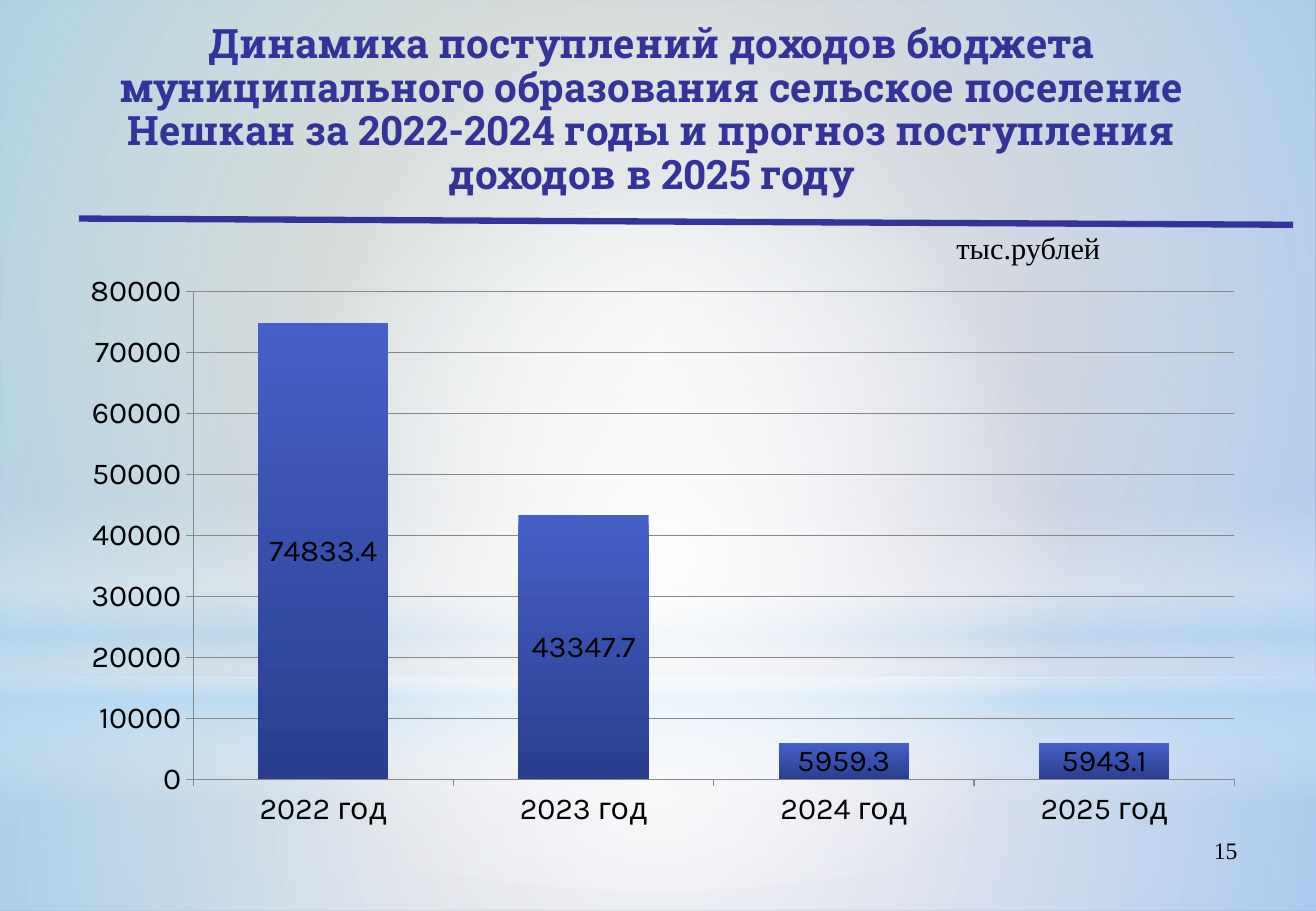
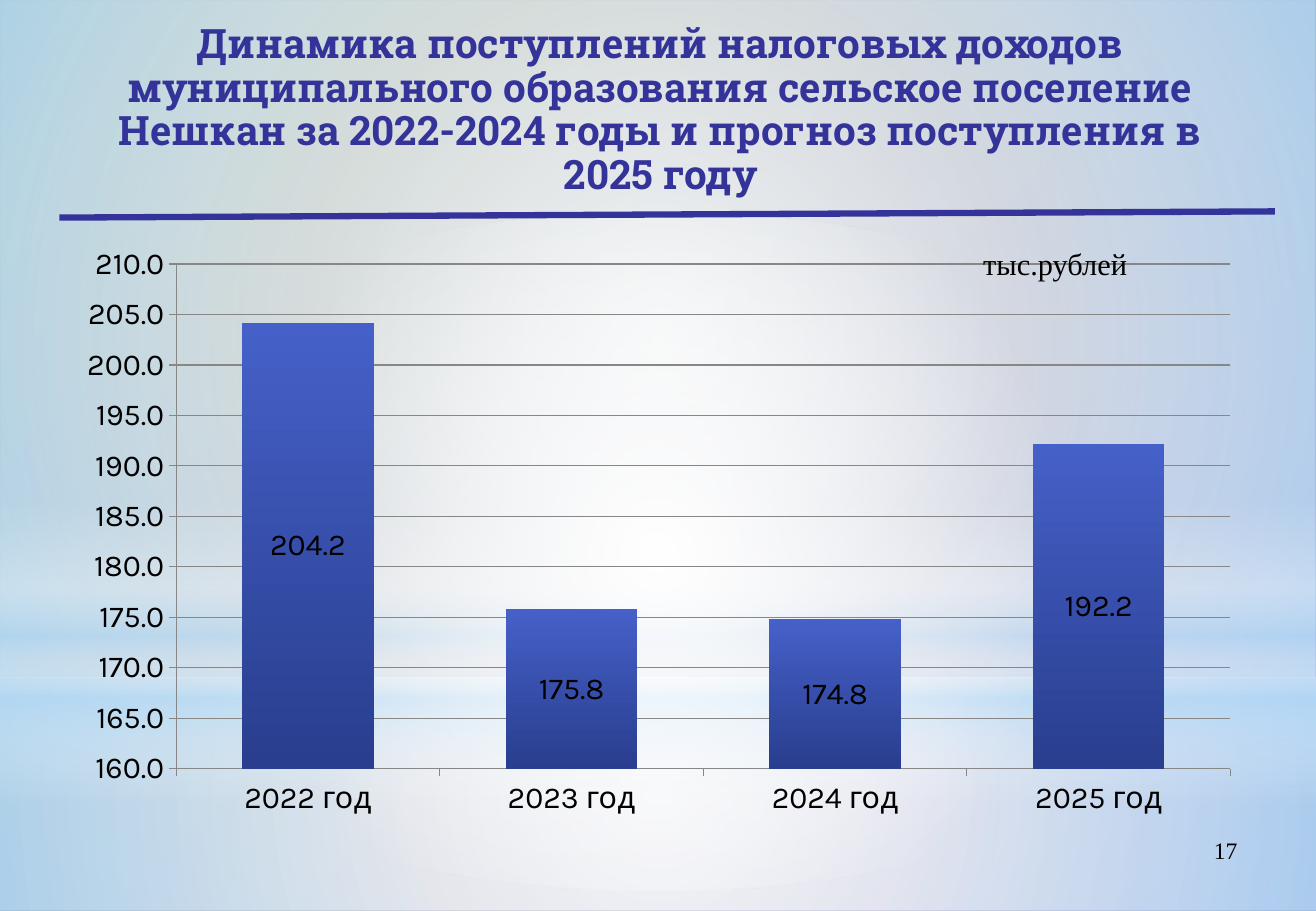
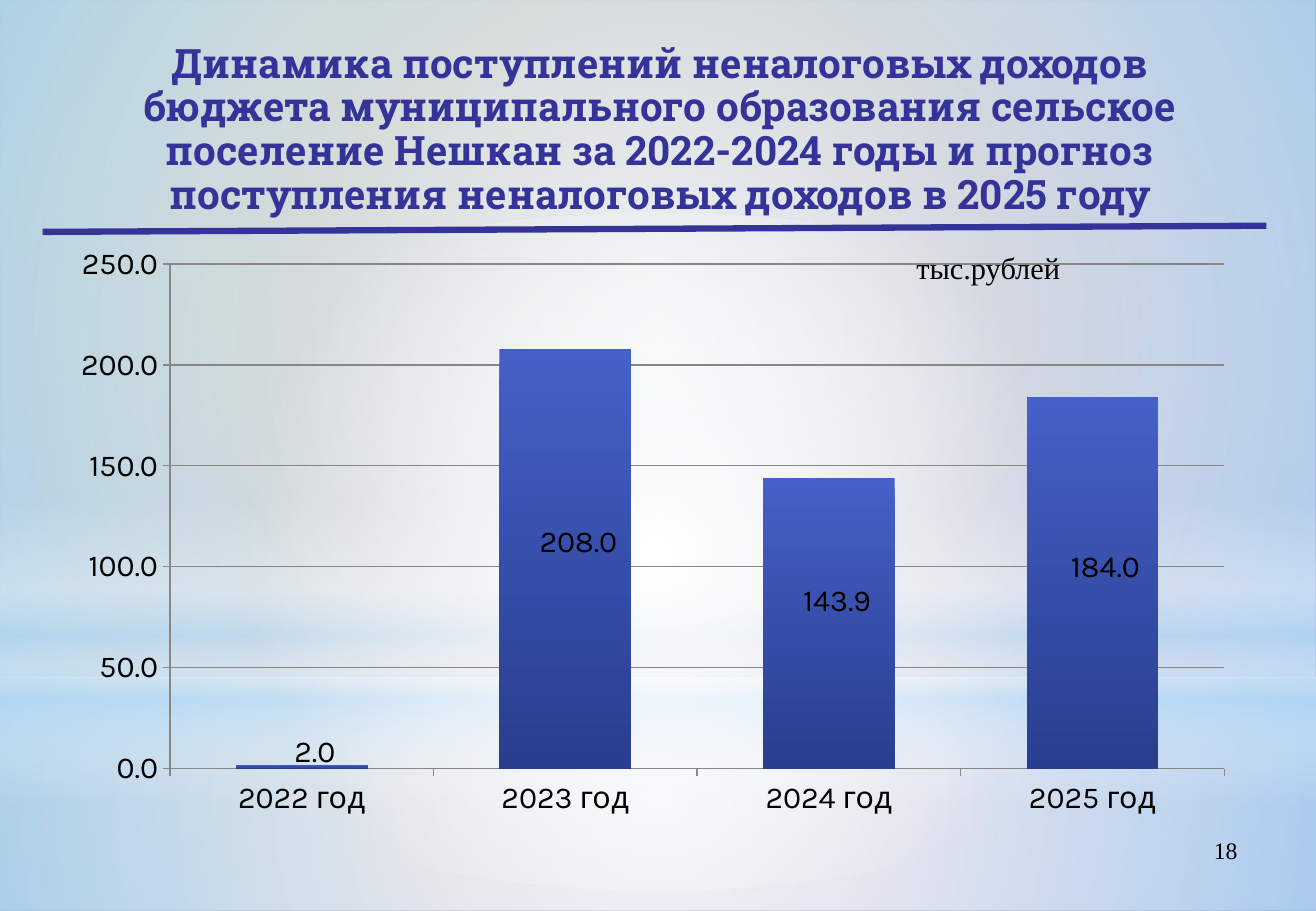
from dataclasses import dataclass

from lxml import etree
from pptx import Presentation
from pptx.chart.data import CategoryChartData
from pptx.dml.color import RGBColor
from pptx.enum.chart import XL_CHART_TYPE, XL_LABEL_POSITION, XL_TICK_MARK
from pptx.enum.shapes import MSO_CONNECTOR, MSO_SHAPE
from pptx.enum.text import MSO_ANCHOR, MSO_AUTO_SIZE, PP_ALIGN
from pptx.oxml import parse_xml
from pptx.oxml.ns import nsdecls, qn
from pptx.util import Cm, Pt

STACKED = XL_CHART_TYPE.COLUMN_STACKED
CENTER = XL_LABEL_POSITION.CENTER
OUTSIDE = XL_TICK_MARK.OUTSIDE
RECT, OVAL = MSO_SHAPE.RECTANGLE, MSO_SHAPE.OVAL
STRAIGHT = MSO_CONNECTOR.STRAIGHT
MIDDLE = MSO_ANCHOR.MIDDLE
FIXED = MSO_AUTO_SIZE.NONE
LEFT, MID, RIGHT = PP_ALIGN.LEFT, PP_ALIGN.CENTER, PP_ALIGN.RIGHT

WIDE, HIGH = 27.53, 19.05
YEARS = ("2022 год", "2023 год", "2024 год", "2025 год")


@dataclass(frozen=True)
class Theme:
    ink: str = "000000"
    head: str = "333399"
    grid: str = "878787"
    bar: tuple = ("4560C8", "293E8E")
    back: tuple = ("96AB94", "8488C4")
    head_font: str = "Roboto Slab"
    body_font: str = "Times New Roman"
    chart_font: str = "Karla"
    head_size: float = 24
    text_size: float = 18
    page_size: float = 14
    rule: float = 3.75


@dataclass(frozen=True)
class Glow:
    kind: int
    top: float
    high: float
    stops: tuple
    round: bool = True


@dataclass(frozen=True)
class Scale:
    low: float
    high: float
    step: float
    form: str


@dataclass(frozen=True)
class Page:
    title: str
    num: str
    head: tuple
    rule: tuple
    box: tuple
    unit: tuple
    left: float
    vals: tuple
    scale: Scale
    shifts: tuple = ()


THEME = Theme()

GLOWS = (
    Glow(RECT, 14.17, 4.88, ((0, "FFFFFF", 91), (37, "FFFFFF", 76), (100, "B4DCFA", 79))),
    Glow(RECT, 0, 14.17, ((0, "FFFFFF", 89), (48, "FFFFFF", 62), (100, "B4DCFA", 79))),
    Glow(RECT, 10.46, 6.35, ((0, "FFFFFF", 0), (29, "FFFFFF", 30), (45, "B4DCFA", 40),
                             (55, "FFFFFF", 26), (65, "B4DCFA", 60), (100, "FFFFFF", 0)), False),
    Glow(OVAL, 4.45, 14.17, ((0, "FFFFFF", 100), (56, "FFFFFF", 0))),
)

PAGES = (
    Page("Динамика поступлений доходов бюджета муниципального образования сельское поселение "
         "Нешкан за 2022-2024 годы и прогноз поступления доходов в 2025 году",
         "15", (1.24, 0.58), (1.65, 4.57, 27.05, 4.7), (1.4, 5.49, 24.92, 12.01),
         (19.76, 4.67), 0.106, (74833.4, 43347.7, 5959.3, 5943.1),
         Scale(0, 80000, 10000, "General")),
    Page("Динамика поступлений налоговых доходов муниципального образования сельское поселение "
         "Нешкан за 2022-2024 годы и прогноз поступления в 2025 году",
         "17", (1.42, 0.58), (1.24, 4.55, 26.67, 4.42), (1.32, 4.9, 24.92, 12.42),
         (20.32, 5), 0.095, (204.2, 175.8, 174.8, 192.2), Scale(160, 210, 5, "0.0")),
    Page("Динамика поступлений неналоговых доходов бюджета муниципального образования сельское "
         "поселение Нешкан за 2022-2024 годы и прогноз поступления неналоговых доходов в 2025 году",
         "18", (1.42, 0.99), (0.89, 4.85, 26.49, 4.72), (1.19, 4.9, 24.92, 12.42),
         (18.92, 5.08), 0.095, (2, 208, 143.9, 184), Scale(0, 250, 50, "0.0"),
         ((0.011, -0.025), (0.011, -0.027), (0.007, -0.037), (0.011, -0.027))),
)


def tint(code: str) -> RGBColor:
    return RGBColor.from_string(code)


def style(font, face: str, size: float, code: str, bold: bool = False) -> None:
    font.name = face
    font.size = Pt(size)
    font.bold = bold
    font.color.rgb = tint(code)


def write(frame, text: str, face: str, size: float, code: str, side, bold: bool = False):
    para = frame.paragraphs[0]
    para.alignment = side
    run = para.add_run()
    run.text = text
    style(run.font, face, size, code, bold)
    return para


def blend(fill, codes: tuple, turn: float) -> None:
    fill.gradient()
    fill.gradient_angle = turn
    for stop, code in zip(fill.gradient_stops, codes):
        stop.color.rgb = tint(code)


def fade(glow: Glow):
    stops = "".join(
        f'<a:gs pos="{pos * 1000}"><a:srgbClr val="{code}">'
        f'<a:alpha val="{alpha * 1000}"/></a:srgbClr></a:gs>'
        for pos, code, alpha in glow.stops)
    way = ('<a:path path="circle"><a:fillToRect l="50000" t="50000" r="50000" b="50000"/></a:path>'
           if glow.round else '<a:lin ang="5400000" scaled="0"/>')
    return parse_xml(f'<a:gradFill {nsdecls("a")} rotWithShape="1">'
                     f'<a:gsLst>{stops}</a:gsLst>{way}</a:gradFill>')


def set_back(deck, slide) -> None:
    blend(deck.slide_master.background.fill, THEME.back, 315)
    tree = deck.slide_master.shapes.element
    for rank, glow in enumerate(GLOWS):
        shape = slide.shapes.add_shape(glow.kind, 0, Cm(glow.top), Cm(WIDE), Cm(glow.high))
        shape.shadow.inherit = False
        shape.line.fill.background()
        node = shape.element
        node.spPr.find(qn("a:prstGeom")).addnext(fade(glow))
        node.find(".//" + qn("p:cNvPr")).set("id", str(100 + rank))
        tree.insert(2 + rank, node)


def add_head(slide, page: Page) -> None:
    title = slide.shapes.title
    title.left, title.top = (Cm(x) for x in page.head)
    title.width, title.height = Cm(24.77), Cm(3.48)
    frame = title.text_frame
    frame.word_wrap = True
    frame.auto_size = FIXED
    frame.vertical_anchor = MIDDLE
    para = write(frame, page.title, THEME.head_font, THEME.head_size, THEME.head, MID, True)
    para.line_spacing = 0.9


def add_rule(slide, ends: tuple) -> None:
    rule = slide.shapes.add_connector(STRAIGHT, *(Cm(x) for x in ends))
    rule.line.color.rgb = tint(THEME.head)
    rule.line.width = Pt(THEME.rule)
    etree.SubElement(rule.element.spPr, qn("a:effectLst"))


def add_text(slide, text: str, box: tuple, size: float, side, wrap: bool) -> None:
    frame = slide.shapes.add_textbox(*(Cm(x) for x in box)).text_frame
    frame.word_wrap = wrap
    write(frame, text, THEME.body_font, size, THEME.ink, side)


def set_plot(chart, left: float) -> None:
    area = chart.plots[0]._element.getparent()
    old = area.find(qn("c:layout"))
    if old is not None:
        area.remove(old)
    spots = (("x", left), ("y", 0.05), ("w", 0.98 - left), ("h", 0.85))
    vals = "".join(f'<c:{key} val="{val:.3f}"/>' for key, val in spots)
    area.insert(0, parse_xml(
        f'<c:layout {nsdecls("c")}><c:manualLayout><c:layoutTarget val="inner"/>'
        f'<c:xMode val="edge"/><c:yMode val="edge"/>{vals}</c:manualLayout></c:layout>'))


def shift_tags(row, page: Page) -> None:
    for rank, _ in enumerate(page.shifts):
        tag = row.points[rank].data_label
        style(tag.font, THEME.chart_font, THEME.text_size, THEME.ink)
        tag.position = CENTER
    nodes = row._element.iter(qn("c:dLbl"))
    for node, (dx, dy) in zip(nodes, page.shifts):
        node.insert(1, parse_xml(
            f'<c:layout {nsdecls("c")}><c:manualLayout><c:x val="{dx}"/>'
            f'<c:y val="{dy}"/></c:manualLayout></c:layout>'))
        node.insert(2, parse_xml(
            f'<c:numFmt {nsdecls("c")} formatCode="{page.scale.form}" sourceLinked="0"/>'))


def add_bars(slide, page: Page) -> None:
    data = CategoryChartData()
    data.categories = YEARS
    data.add_series("Series 1", page.vals)
    chart = slide.shapes.add_chart(STACKED, *(Cm(x) for x in page.box), data).chart
    chart.has_legend = False
    chart.has_title = False
    style(chart.font, THEME.chart_font, THEME.text_size, THEME.ink)
    set_plot(chart, page.left)
    plot = chart.plots[0]
    plot.gap_width = 100
    plot.overlap = 100
    plot.vary_by_categories = False
    row = plot.series[0]
    blend(row.format.fill, THEME.bar, 270)
    tags = row.data_labels
    tags.show_value = True
    tags.position = CENTER
    tags.number_format = page.scale.form
    tags.number_format_is_linked = False
    style(tags.font, THEME.chart_font, THEME.text_size, THEME.ink)
    shift_tags(row, page)
    axis = chart.value_axis
    axis.minimum_scale = page.scale.low
    axis.maximum_scale = page.scale.high
    axis.major_unit = page.scale.step
    axis.tick_labels.number_format = page.scale.form
    axis.tick_labels.number_format_is_linked = False
    axis.has_major_gridlines = True
    for part in (axis, chart.category_axis):
        part.major_tick_mark = OUTSIDE
    for part in (axis, chart.category_axis, axis.major_gridlines):
        part.format.line.color.rgb = tint(THEME.grid)
        part.format.line.width = Pt(0.75)


def add_page(slide, page: Page) -> None:
    add_text(slide, page.num, (19.71, 17.35, 6.43, 1.32), THEME.page_size, RIGHT, True)
    add_head(slide, page)
    add_rule(slide, page.rule)
    add_bars(slide, page)
    add_text(slide, "тыс.рублей", (*page.unit, 3.56, 1.02), THEME.text_size, LEFT, False)


def main() -> None:
    deck = Presentation()
    deck.slide_width, deck.slide_height = Cm(WIDE), Cm(HIGH)
    for rank, page in enumerate(PAGES):
        slide = deck.slides.add_slide(deck.slide_layouts[5])
        if rank == 0:
            set_back(deck, slide)
        add_page(slide, page)
    deck.save("out.pptx")


if __name__ == "__main__":
    main()
